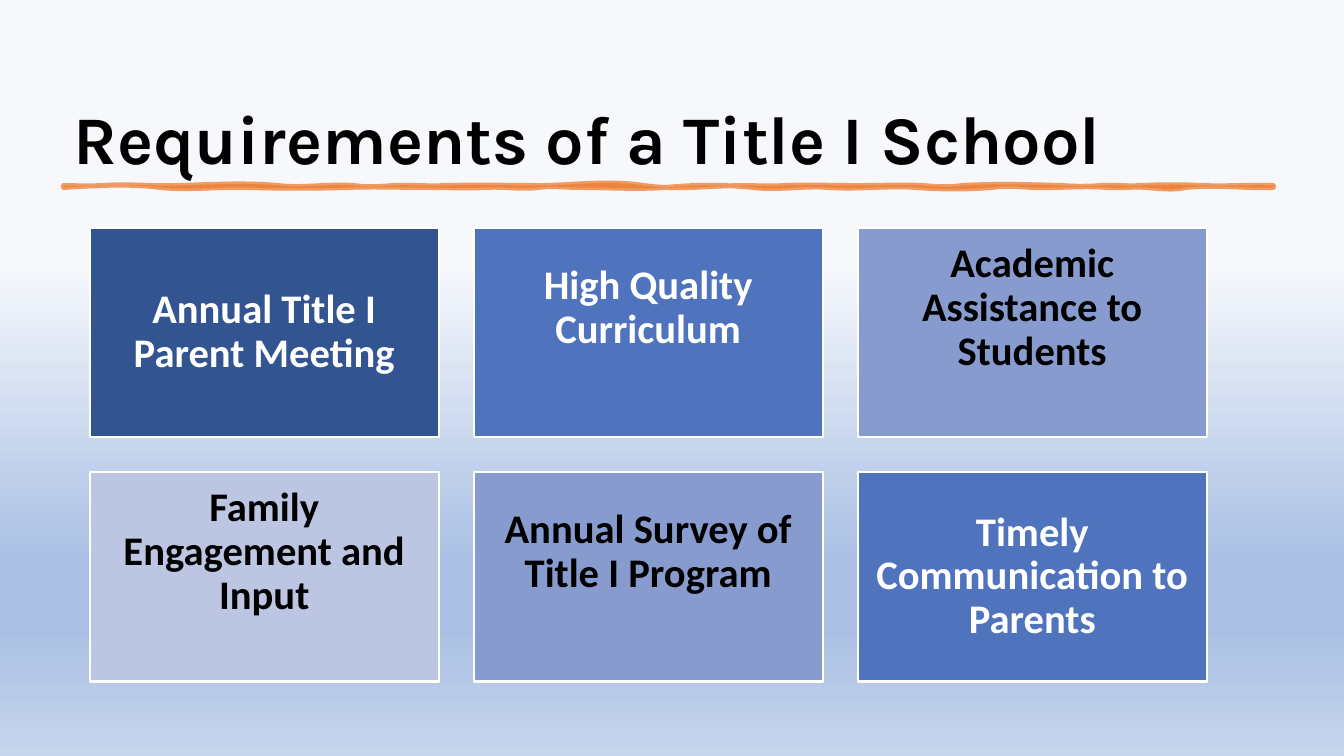
from pptx import Presentation
from pptx.dml.color import RGBColor
from pptx.enum import shapes as s
from pptx.enum import text as t
from pptx.oxml.ns import qn
from pptx.util import Inches, Pt
from lxml import etree

BLACK = RGBColor(0x00, 0x00, 0x00)
WHITE = RGBColor(0xFF, 0xFF, 0xFF)
ORANGE = RGBColor(0xED, 0x7D, 0x31)
NAVY = RGBColor(0x32, 0x54, 0x91)
BLUE = RGBColor(0x4F, 0x73, 0xBD)
PERIWINKLE = RGBColor(0x87, 0x9B, 0xCE)
LAVENDER = RGBColor(0xBC, 0xC6, 0xE2)
SKY_STOPS = [(35, RGBColor(0xF6, 0xF8, 0xFC)), (74, RGBColor(0xAB, 0xC0, 0xE4)),
             (83, RGBColor(0xAB, 0xC0, 0xE4)), (100, RGBColor(0xC7, 0xD5, 0xED))]

# Wording, fill, text colour, and whether the text sits half a line high
REQUIREMENTS = [
    ("Annual Title I Parent Meeting", NAVY, WHITE, False),
    ("High Quality Curriculum", BLUE, WHITE, True),
    ("Academic Assistance to Students", PERIWINKLE, BLACK, True),
    ("Family Engagement and Input", LAVENDER, BLACK, True),
    ("Annual Survey of Title I Program", PERIWINKLE, BLACK, True),
    ("Timely Communication to Parents", BLUE, WHITE, False),
]
COLUMNS = 3

# Brush edges: end of each wave, then its two bends in hundredths of an inch
BRUSH_TOP = [
    (0.39, 0, 1), (1.14, -2, 1), (2.13, -1, -3), (2.88, 3, -2), (3.27, 2, 1),
    (3.78, -1, 1), (4.77, -1, 0), (5.76, -1, -5), (6.75, 5, 0), (7.14, 0, 1),
    (7.89, -1, 0), (8.52, 0, -1), (8.91, 1, 2), (9.9, -2, -1), (10.29, 1, 1),
    (10.68, -1, 1), (11.31, -1, -1), (12, 1, -1)]
BRUSH_BOTTOM = [
    (11.13, 1, -3), (10.74, 3, 1), (10.35, -1, 1), (9.6, -2, 1), (9.21, -1, -2),
    (8.46, 2, 2), (7.59, -2, 2), (6.84, -2, 3), (5.97, -3, -3), (5.1, 2, 0),
    (4.71, 0, -2), (4.2, 2, -1), (3.57, 1, 0), (2.82, 0, -1), (1.83, 1, 1),
    (0.96, -1, 3), (0, -4, -2)]


def paint_background(slide):
    fill = slide.background.fill
    fill.gradient()
    fill.gradient_angle = 270
    stops = next(slide.element.iter(qn("a:gsLst")))
    for stop in list(stops):
        stops.remove(stop)
    for percent, color in SKY_STOPS:
        stop = etree.SubElement(stops, qn("a:gs"), pos=str(percent * 1000))
        etree.SubElement(stop, qn("a:srgbClr"), val=str(color))


def add_heading(slide, left, top, width, height):
    heading = slide.shapes.title
    heading.left, heading.top, heading.width, heading.height = left, top, width, height
    frame = heading.text_frame
    frame.text = "Requirements of a Title I School"
    frame.word_wrap = True
    frame.auto_size = t.MSO_AUTO_SIZE.NONE
    frame.vertical_anchor = t.MSO_ANCHOR.BOTTOM
    line = frame.paragraphs[0]
    line.alignment = t.PP_ALIGN.LEFT
    line.line_spacing = 0.9
    line.font.name, line.font.size, line.font.bold = "Karla", Pt(48.6), True
    line.font.color.rgb = BLACK


def bend_segment(segment, start, bend_1, bend_2):
    """Turn a straight segment into a cubic wave with controls at its thirds."""
    end = segment[0]
    end_x, end_y = int(end.get("x")), int(end.get("y"))
    segment.tag = qn("a:cubicBezTo")
    for third, bend in ((1, bend_1), (2, bend_2)):
        control = etree.Element(qn("a:pt"))
        control.set("x", str(start + (end_x - start) * third // 3))
        control.set("y", str(end_y + Inches(bend / 100)))
        end.addprevious(control)
    return end_x


def add_brush_stroke(slide, left, top, width, height):
    right, bottom = left + width, top + height
    outline = slide.shapes.build_freeform(left, top, scale=1.0)
    outline.add_line_segments(
        [(left + Inches(x), top) for x, *_ in BRUSH_TOP] + [(right, bottom)]
        + [(left + Inches(x), bottom) for x, *_ in BRUSH_BOTTOM], close=True)
    brush = outline.convert_to_shape()
    # Bend both long edges; the segment between them is the straight right end
    segments = list(brush.element.spPr.iter(qn("a:lnTo")))
    edges = ((0, BRUSH_TOP, 0), (width, BRUSH_BOTTOM, len(BRUSH_TOP) + 1))
    for start, waves, first in edges:
        for segment, (_, bend_1, bend_2) in zip(segments[first:], waves):
            start = bend_segment(segment, start, bend_1, bend_2)
    brush.shadow.inherit = False
    brush.fill.solid()
    brush.fill.fore_color.rgb = ORANGE
    brush.line.color.rgb = ORANGE
    brush.line.width = Pt(3.5)
    # Fill and line are both 75% opaque
    for color in brush.element.spPr.iter(qn("a:srgbClr")):
        etree.SubElement(color, qn("a:alpha"), val="75000")


def add_card(slide, left, top, width, height, requirement):
    wording, fill, ink, raised = requirement
    card = slide.shapes.add_shape(s.MSO_SHAPE.RECTANGLE, left, top, width, height)
    card.shadow.inherit = False
    card.fill.solid()
    card.fill.fore_color.rgb = fill
    card.line.color.rgb = WHITE
    card.line.width = Pt(1.5)
    frame = card.text_frame
    frame.text = wording
    frame.word_wrap = True
    frame.vertical_anchor = t.MSO_ANCHOR.MIDDLE
    frame.margin_left = frame.margin_right = frame.margin_top = Inches(0.12)
    frame.margin_bottom = Inches(0.6 if raised else 0.12)
    line = frame.paragraphs[0]
    line.alignment = t.PP_ALIGN.CENTER
    line.line_spacing = 0.9
    line.font.name, line.font.size, line.font.bold = "Calibri", Pt(29), True
    line.font.color.rgb = ink


def add_card_grid(slide, left, top, width):
    # Cards are 5:3, with gaps a tenth of a card's width
    card_width = int(width / (COLUMNS + 0.1 * (COLUMNS - 1)))
    card_height = int(card_width * 0.6)
    gap = card_width // 10
    for index, requirement in enumerate(REQUIREMENTS):
        row, column = divmod(index, COLUMNS)
        add_card(slide, left + column * (card_width + gap),
                 top + row * (card_height + gap), card_width, card_height, requirement)


def main():
    deck = Presentation()
    deck.slide_width, deck.slide_height = Inches(13.33), Inches(7.5)
    slide = deck.slides.add_slide(deck.slide_layouts[5])
    paint_background(slide)
    add_heading(slide, Inches(0.63), Inches(0.26), Inches(12.05), Inches(1.57))
    add_brush_stroke(slide, Inches(0.63), Inches(1.84), Inches(12), Inches(0.02))
    add_card_grid(slide, Inches(0.89), Inches(2.26), Inches(11.08))
    deck.save("out.pptx")


if __name__ == "__main__":
    main()
